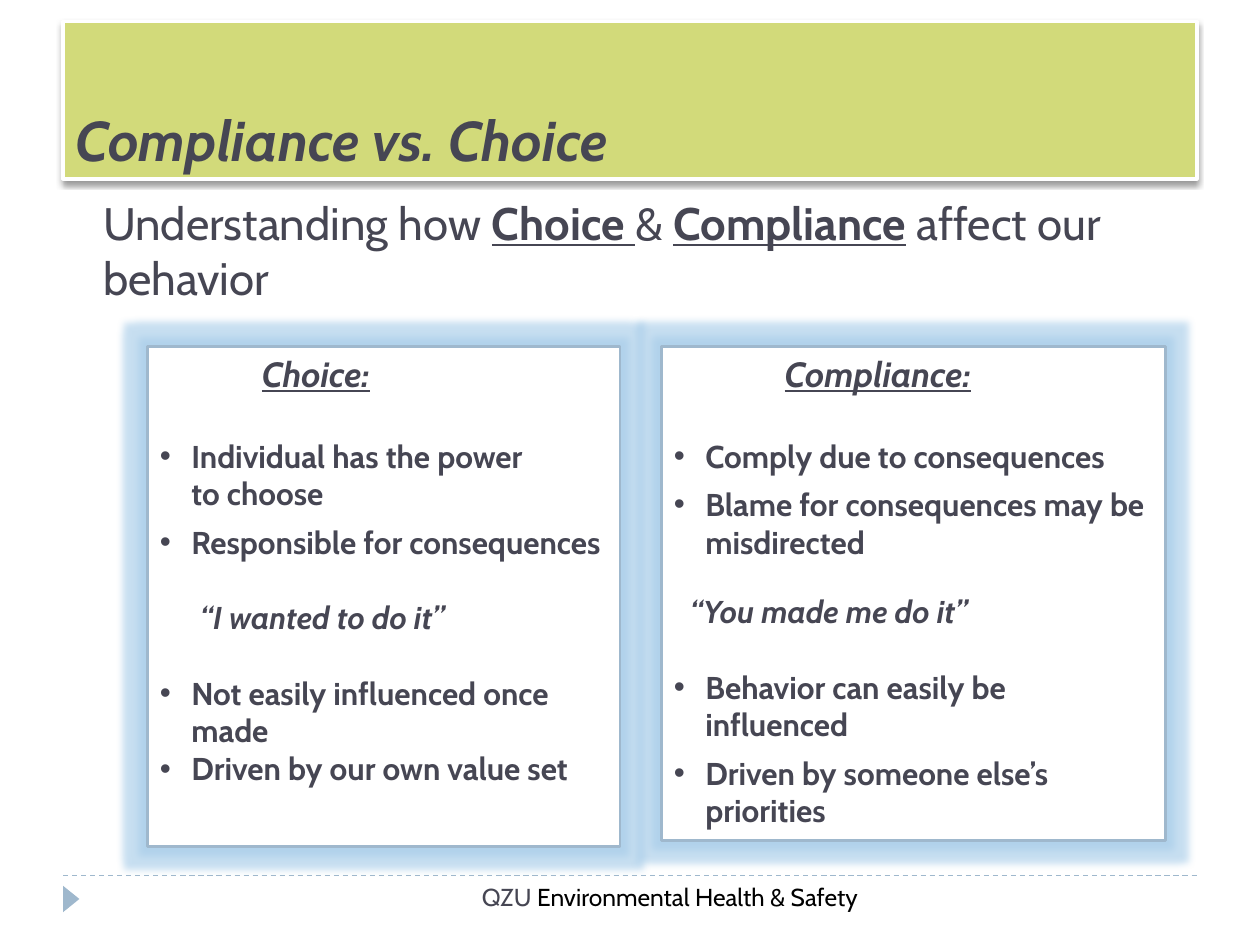
from lxml import etree
from pptx import Presentation
from pptx.dml.color import RGBColor
from pptx.enum.dml import MSO_LINE
from pptx.enum.shapes import MSO_CONNECTOR, MSO_SHAPE
from pptx.enum.text import MSO_ANCHOR, MSO_AUTO_SIZE, PP_ALIGN
from pptx.oxml.ns import qn
from pptx.util import Inches, Pt

COLORS = {
    "ink": "464653",
    "black": "000000",
    "white": "FFFFFF",
    "banner": "D2DA7A",
    "accent": "9FB8CD",
    "glow": "A3CAE8",
}
FONT = "Cabin"


def rgb(name):
    return RGBColor.from_string(COLORS[name])


def add_run(paragraph, text, size, color="ink", bold=False, italic=False, underline=False):
    for index, line in enumerate(text.split("\n")):
        if index:
            paragraph.add_line_break()
        run = paragraph.add_run()
        run.text = line
        font = run.font
        font.name, font.size = FONT, Pt(size)
        font.bold, font.italic, font.underline = bold, italic, underline
        font.color.rgb = rgb(color)


def format_paragraph(paragraph, margin=0, before=0, bullet=False):
    paragraph.alignment = PP_ALIGN.LEFT
    paragraph.space_before = Pt(before)
    properties = paragraph._p.get_or_add_pPr()
    properties.set("marL", str(Inches(margin)))
    properties.set("indent", str(Inches(-margin if bullet else 0)))
    if bullet:
        etree.SubElement(properties, qn("a:buFont")).set("typeface", "Arial")
        etree.SubElement(properties, qn("a:buChar")).set("char", "•")


def paint(shape, fill, line, width):
    shape.shadow.inherit = False
    shape.fill.solid()
    shape.fill.fore_color.rgb = rgb(fill)
    shape.line.color.rgb = rgb(line)
    shape.line.width = Pt(width)


def add_effect(shape, tag, color, alpha, **settings):
    effects = shape._element.spPr.find(qn("a:effectLst"))
    effect = etree.SubElement(effects, qn(tag))
    for key, value in settings.items():
        effect.set(key, str(value))
    tint = etree.SubElement(effect, qn("a:srgbClr"))
    tint.set("val", COLORS[color])
    etree.SubElement(tint, qn("a:alpha")).set("val", str(alpha * 1000))


def place_title(slide, left, top, width, height):
    title = slide.shapes.title
    title.left, title.top = Inches(left), Inches(top)
    title.width, title.height = Inches(width), Inches(height)
    paint(title, "banner", "white", 2)
    add_effect(title, "a:outerShdw", "black", 40, blurRad=Pt(3), dist=Pt(2),
               dir=90 * 60000, rotWithShape=0)
    frame = title.text_frame
    frame.auto_size = MSO_AUTO_SIZE.NONE
    frame.vertical_anchor = MSO_ANCHOR.BOTTOM
    format_paragraph(frame.paragraphs[0])
    add_run(frame.paragraphs[0], "Compliance vs. Choice", 32, bold=True, italic=True)


def add_intro(slide, left, top, width, height):
    intro = slide.shapes.add_textbox(Inches(left), Inches(top), Inches(width), Inches(height))
    intro.text_frame.word_wrap = True
    sentence = intro.text_frame.paragraphs[0]
    format_paragraph(sentence, margin=0.3, before=6)
    for text, stressed in (
        ("Understanding how ", False),
        ("Choice ", True),
        ("& ", False),
        ("Compliance", True),
        (" affect our behavior", False),
    ):
        add_run(sentence, text, 26, bold=stressed, underline=stressed)


def add_panel(slide, left, top, width, height, heading, heading_margin, points):
    panel = slide.shapes.add_shape(
        MSO_SHAPE.RECTANGLE, Inches(left), Inches(top), Inches(width), Inches(height))
    paint(panel, "white", "accent", 1.5)
    add_effect(panel, "a:glow", "glow", 60, rad=Inches(0.12))
    frame = panel.text_frame
    frame.word_wrap = True
    frame.vertical_anchor = MSO_ANCHOR.TOP
    header = frame.paragraphs[0]
    format_paragraph(header, margin=heading_margin)
    add_run(header, heading, 20, bold=True, italic=True, underline=True)
    for text, before, quote_margin in points:
        is_quote = quote_margin is not None
        point = frame.add_paragraph()
        format_paragraph(point, quote_margin if is_quote else 0.25, before, not is_quote)
        add_run(point, text, 18, bold=True, italic=is_quote)


def add_footer(slide, left, top, width, height):
    rule = slide.shapes.add_connector(
        MSO_CONNECTOR.STRAIGHT, Inches(left), Inches(top), Inches(left + width), Inches(top))
    rule.line.color.rgb = rgb("accent")
    rule.line.width = Pt(0.75)
    rule.line.dash_style = MSO_LINE.DASH
    etree.SubElement(rule._element.spPr, qn("a:effectLst"))

    marker = slide.shapes.add_shape(
        MSO_SHAPE.ISOSCELES_TRIANGLE, Inches(left - 0.04), Inches(top + 0.12),
        Inches(0.21), Inches(0.13))
    paint(marker, "accent", "accent", 0)
    marker.line.fill.background()
    marker.rotation = 90

    department = slide.shapes.add_textbox(
        Inches(left + 2.67), Inches(top), Inches(3.83), Inches(height))
    frame = department.text_frame
    frame.word_wrap = True
    frame.margin_right = Inches(0.19)
    credit = frame.paragraphs[0]
    credit.alignment = PP_ALIGN.RIGHT
    add_run(credit, "QZU ", 14)
    add_run(credit, "Environmental Health & Safety", 14, "black")


def main():
    presentation = Presentation()
    presentation.slide_width, presentation.slide_height = Inches(10), Inches(7.5)
    slide = presentation.slides.add_slide(presentation.slide_layouts[5])
    place_title(slide, 0.5, 0.17, 9, 1.25)
    add_footer(slide, 0.5, 6.95, 9, 0.4)
    add_intro(slide, 0.42, 1.5, 9.25, 1.1)
    add_panel(slide, 1.17, 2.75, 3.75, 3.97, "Choice:", 0.81, [
        ("Individual has the power\nto choose", 24, None),
        ("Responsible for consequences", 6, None),
        ("“I wanted to do it”", 21.5, 0.32),
        ("Not easily influenced once made", 21.5, None),
        ("Driven by our own value set", 0, None),
    ])
    add_panel(slide, 5.25, 2.75, 4, 3.92, "Compliance:", 0.88, [
        ("Comply due to consequences", 24, None),
        ("Blame for consequences may be misdirected", 6, None),
        ("“You made me do it”", 18, 0.13),
        ("Behavior can easily be influenced", 21.5, None),
        ("Driven by someone else’s priorities", 6, None),
    ])
    presentation.save("out.pptx")


if __name__ == "__main__":
    main()
